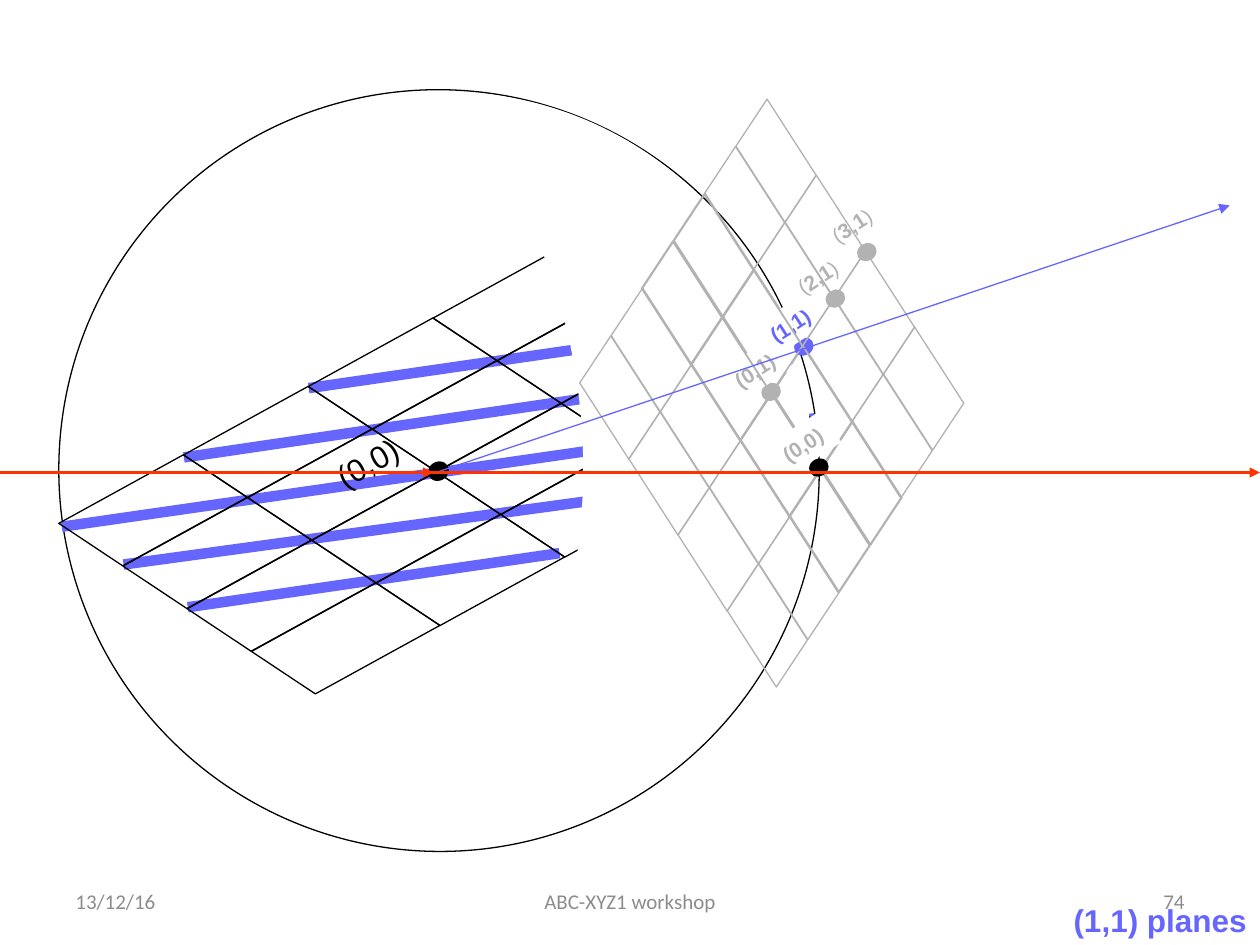
"""Build the slide of the Ewald circle with the (1,1) planes and the reciprocal lattice."""
import pptx
import pptx.dml.color
import pptx.enum.shapes
import pptx.enum.text
import pptx.oxml.ns
import pptx.util

Pt = pptx.util.Pt
RGB = pptx.dml.color.RGBColor.from_string
qn = pptx.oxml.ns.qn
MSO = pptx.enum.shapes.MSO_SHAPE
ANCHOR = pptx.enum.text.MSO_ANCHOR
ALIGN = pptx.enum.text.PP_ALIGN
COLORS = {
    "black": "000000",
    "white": "FFFFFF",
    "blue": "6666FF",
    "red": "FF3300",
    "grey": "B2B2B2",
    "footer": "8C8C8C",
}

prs = pptx.Presentation()
prs.slide_width, prs.slide_height = Pt(720), Pt(540)
s = prs.slides.add_slide(prs.slide_layouts[6])


def add_shape(kind, box, runs=(), rotation=0, flip=False, fill=None, line=None, font="Arial",
              size=12, color="black", align=ALIGN.LEFT, anchor=ANCHOR.TOP, wrap=False):
    """Add a preset shape, or a text box if kind is None, with (text, bold) runs."""
    box = [Pt(v) for v in box]
    if kind is None:
        sp = s.shapes.add_textbox(*box)
    else:
        sp = s.shapes.add_shape(kind, *box)
        sp.shadow.inherit = False
    sp.rotation = rotation
    if flip:
        sp._element.spPr.find(qn("a:xfrm")).set("flipH", "1")
    if fill:
        sp.fill.solid()
        sp.fill.fore_color.rgb = RGB(COLORS[fill])
    else:
        sp.fill.background()
    if line:
        sp.line.color.rgb = RGB(COLORS[line])
        sp.line.width = Pt(0.75)
    else:
        sp.line.fill.background()
    if runs:
        tf = sp.text_frame
        tf.word_wrap = wrap
        tf.vertical_anchor = anchor
        p = tf.paragraphs[0]
        p.alignment = align
        for text, bold in runs:
            r = p.add_run()
            r.text = text
            r.font.name, r.font.size, r.font.bold = font, Pt(size), bold
            r.font.color.rgb = RGB(COLORS[color])
    return sp


def add_line(x1, y1, x2, y2, color, width, arrow=True):
    """Add a straight line, with an arrowhead at its end if wanted."""
    c = s.shapes.add_connector(pptx.enum.shapes.MSO_CONNECTOR.STRAIGHT, Pt(x1), Pt(y1), Pt(x2), Pt(y2))
    c.line.color.rgb = RGB(COLORS[color])
    c.line.width = Pt(width)
    spPr = c._element.spPr
    if arrow:
        spPr.find(qn("a:ln")).append(spPr.makeelement(qn("a:tailEnd"), {"type": "triangle"}))
    spPr.append(spPr.makeelement(qn("a:effectLst"), {}))


footers = [
    ("13/12/16", 36, 168, ALIGN.LEFT),
    ("ABC-XYZ1 workshop", 246, 228, ALIGN.CENTER),
    ("74", 516, 168, ALIGN.RIGHT),
]
for text, x, w, align in footers:
    add_shape(None, (x, 500.5, w, 28.75), [(text, False)], font="Calibri", color="footer",
              align=align, anchor=ANCHOR.MIDDLE, wrap=True)
add_shape(None, (606.4, 511.2, 113.6, 29), [("(1,1) planes", True)], size=18, color="blue")

add_shape(MSO.OVAL, (33.8, 51.1, 434.2, 435.6), rotation=331.2, fill="white", line="black")

planes = [
    (107.3, 347, 319.7, 316.1),
    (176.4, 221.8, 391, 190.8),
    (70.6, 322.6, 393.1, 278.6),
    (35.3, 301, 465.8, 239),
    (105.1, 261.4, 428.4, 213.8),
]
for ends in planes:
    add_line(*ends, "blue", 6, arrow=False)

lattices = [
    ((36.7, 272.2), (71.3, -39.1), (36.7, 24.4), (101.5, 38.9), 331.2, "black"),
    ((321.8, 212.4), (18, -27.1), (28.1, 43.4), (64.8, 29.5), 57.2, "grey"),
    ((357.1, 158.4), (18, -27.1), (28.1, 43.4), (64.8, 29.5), 57.2, "grey"),
]
dots = [(434.9, 218.9, "grey"), (453.6, 193, "blue"), (471.6, 165.6, "grey"), (489.6, 139, "grey")]
labels = [
    ([("(0,1)", True)], 411.8, 200.9, "grey"),
    ([("(1,1)", True)], 432, 175, "blue"),
    ([("(", False), ("2,1", True), (")", False)], 447.8, 147.6, "grey"),
    ([("(", False), ("3,1", True), (")", False)], 467.3, 118.1, "grey"),
]
for index, ((x, y), u, v, size, rotation, color) in enumerate(lattices):
    for i in range(4):
        for j in range(4):
            cell = (x + i * u[0] + j * v[0], y + i * u[1] + j * v[1], *size)
            add_shape(MSO.FLOWCHART_DATA, cell, rotation=rotation, flip=True, line=color)
    if index == 0:
        add_shape(None, (184.3, 249.8, 51.8, 28.8), [("(0,0)", False)], rotation=331.2, size=18)
        add_shape(MSO.OVAL, (244.8, 264.2, 11.5, 10.1), rotation=331.2, fill="black", line="black")
        add_line(0, 270, 247.7, 270, "red", 0.75)
        moon = add_shape(MSO.MOON, (256.3, 52.6, 208.1, 430.6), flip=True, fill="white")
        moon.adjustments[0] = 0.63
    elif index == 1:
        for dot_x, dot_y, dot_color in dots:
            add_shape(MSO.OVAL, (dot_x, dot_y, 11.5, 10.1), rotation=327.2, fill=dot_color)
        for runs, label_x, label_y, label_color in labels:
            add_shape(MSO.RECTANGLE, (label_x, label_y, 38.9, 21.6), runs, rotation=327.2,
                      fill="white", color=label_color)

add_shape(MSO.OVAL, (462.2, 262.1, 11.5, 10.1), rotation=327.2, fill="black")
add_shape(MSO.RECTANGLE, (439.2, 243.4, 38.9, 21.6), [("(0,0)", True)], rotation=327.2,
          fill="white", color="grey")

add_line(249.1, 270, 702.7, 117.4, "blue", 0.75)
add_line(0, 270, 720, 270, "red", 1.5)

prs.save("out.pptx")
